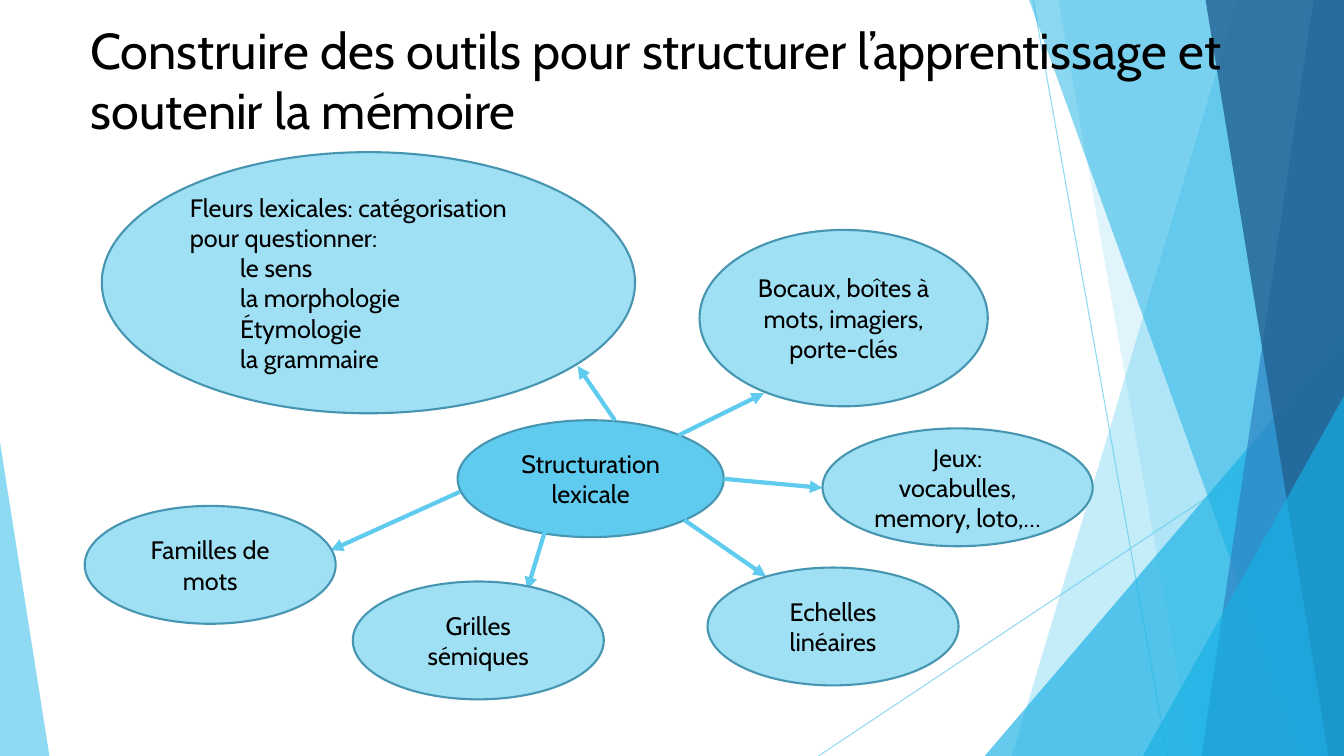
from dataclasses import dataclass

from lxml import etree
from pptx import Presentation
from pptx.dml.color import RGBColor
from pptx.enum.shapes import MSO_CONNECTOR, MSO_SHAPE
from pptx.enum.text import MSO_ANCHOR, PP_ALIGN
from pptx.oxml.ns import qn
from pptx.util import Pt

STRAIGHT = MSO_CONNECTOR.STRAIGHT
OVAL = MSO_SHAPE.OVAL
TRIANGLE = MSO_SHAPE.ISOSCELES_TRIANGLE
TOP, MIDDLE = MSO_ANCHOR.TOP, MSO_ANCHOR.MIDDLE
LEFT, CENTER = PP_ALIGN.LEFT, PP_ALIGN.CENTER
SLIDE_WIDTH, SLIDE_HEIGHT = 960, 540


@dataclass(frozen=True)
class Theme:
    font: str = "Cabin"
    title_size: int = 36
    body_size: int = 18
    text: str = "000000"
    sky: str = "5FCBEF"
    pale: str = "9FE0F5"
    outline: str = "4696B1"
    azure: str = "17B0E4"
    blue: str = "2E83C3"
    navy: str = "226292"


class SlideBuilder:
    def __init__(self, slide, theme):
        self.shapes = slide.shapes
        self.theme = theme

    def set_opacity(self, shape, percent):
        color = shape._element.spPr.find(".//" + qn("a:srgbClr"))
        etree.SubElement(color, qn("a:alpha")).set("val", str(percent * 1000))

    def paint(self, shape, color):
        shape.shadow.inherit = False
        shape.fill.solid()
        shape.fill.fore_color.rgb = RGBColor.from_string(color)

    def paint_facet(self, shape, color, opacity):
        self.paint(shape, color)
        shape.line.fill.background()
        self.set_opacity(shape, opacity)

    def facet(self, points, color, opacity):
        start, *others = [(Pt(x), Pt(y)) for x, y in points]
        builder = self.shapes.build_freeform(*start, scale=1.0)
        builder.add_line_segments(others, close=True)
        self.paint_facet(builder.convert_to_shape(), color, opacity)

    def triangle(self, box, apex, color, opacity):
        shape = self.shapes.add_shape(TRIANGLE, *map(Pt, box))
        shape.adjustments[0] = apex
        self.paint_facet(shape, color, opacity)

    def line(self, start, end, width):
        connector = self.shapes.add_connector(STRAIGHT, *map(Pt, start + end))
        connector.line.width = Pt(width)
        connector.line.color.rgb = RGBColor.from_string(self.theme.sky)
        etree.SubElement(connector._element.spPr, qn("a:effectLst"))
        return connector

    def thin_line(self, start, end):
        self.set_opacity(self.line(start, end, 0.75), 70)

    def arrow(self, start, end):
        connector = self.line(start, end, 3)
        outline = connector._element.spPr.find(qn("a:ln"))
        etree.SubElement(outline, qn("a:tailEnd")).set("type", "triangle")

    def fill_text(self, frame, lines, size, alignment, anchor):
        frame.word_wrap = True
        frame.vertical_anchor = anchor
        for index, (text, indent) in enumerate(lines):
            paragraph = frame.add_paragraph() if index else frame.paragraphs[0]
            paragraph.alignment = alignment
            if indent:
                paragraph._p.get_or_add_pPr().set("marL", str(Pt(indent)))
            run = paragraph.add_run()
            run.text = text
            run.font.name = self.theme.font
            run.font.size = Pt(size)
            run.font.color.rgb = RGBColor.from_string(self.theme.text)

    def title(self, box, text):
        frame = self.shapes.add_textbox(*map(Pt, box)).text_frame
        self.fill_text(frame, [(text, 0)], self.theme.title_size, LEFT, TOP)

    def bubble(self, box, lines, color, alignment=CENTER):
        shape = self.shapes.add_shape(OVAL, *map(Pt, box))
        self.paint(shape, color)
        shape.line.color.rgb = RGBColor.from_string(self.theme.outline)
        shape.line.width = Pt(1.5)
        self.fill_text(shape.text_frame, lines, self.theme.body_size, alignment, MIDDLE)


def draw_background(builder):
    theme = builder.theme
    builder.thin_line((738, 0), (833.8, SLIDE_HEIGHT))
    builder.thin_line((SLIDE_WIDTH, 290.2), (584.6, SLIDE_HEIGHT))

    def band(top_x, bottom_x, color, opacity):
        corners = [(top_x, 0), (SLIDE_WIDTH, 0),
                   (SLIDE_WIDTH, SLIDE_HEIGHT), (bottom_x, SLIDE_HEIGHT)]
        builder.facet(corners, color, opacity)

    def right_triangle(left, top):
        box = (left, top, SLIDE_WIDTH - left, SLIDE_HEIGHT - top)
        builder.triangle(box, 1, theme.azure, 66)

    band(884.2, 722.9, theme.sky, 36)
    band(756, 851.8, theme.sky, 20)
    right_triangle(703.4, 239.8)
    band(735.1, 929.5, theme.azure, 50)
    band(938.2, 858.2, theme.blue, 70)
    band(861.1, 949, theme.navy, 80)
    right_triangle(816.5, 283)
    builder.triangle((0, 316, 35.3, 224), 0, theme.sky, 70)


def draw_map(builder):
    theme = builder.theme
    builder.bubble((326.9, 300.2, 190.1, 83.5), [("Structuration lexicale", 0)], theme.sky)

    arrows = [
        ((439.2, 300.2), (412.6, 261.4)),
        ((484.6, 311), (545.8, 280.8)),
        ((488.9, 371.5), (547.2, 411.8)),
        ((391, 373.7), (376.6, 421.2)),
        ((328.3, 351.4), (236.2, 393.1)),
        ((517, 342), (587.5, 348.5)),
    ]
    for start, end in arrows:
        builder.arrow(start, end)

    tools = [
        ((499.7, 164.2, 205.9, 126), "Bocaux, boîtes à mots, imagiers, porte-clés"),
        ((252, 415.4, 179.3, 84.2), "Grilles sémiques"),
        ((60.5, 361.4, 179.3, 84.2), "Familles de mots"),
        ((587.5, 306, 193, 84.2), "Jeux: vocabulles, memory, loto,…"),
        ((505.4, 405.4, 179.3, 84.2), "Echelles linéaires"),
    ]
    for box, text in tools:
        builder.bubble(box, [(text, 0)], theme.pale)

    flower_lines = [("Fleurs lexicales: catégorisation pour questionner:", 0)]
    for topic in ("le sens", "la morphologie", "Étymologie", "la grammaire"):
        flower_lines.append((topic, 36))
    builder.bubble((72.7, 108.7, 380.9, 186.5), flower_lines, theme.pale, LEFT)


def main():
    presentation = Presentation()
    presentation.slide_width = Pt(SLIDE_WIDTH)
    presentation.slide_height = Pt(SLIDE_HEIGHT)
    slide = presentation.slides.add_slide(presentation.slide_layouts[6])
    builder = SlideBuilder(slide, Theme())
    draw_background(builder)
    builder.title(
        (57.6, 10.1, 879.1, 103.7),
        "Construire des outils pour structurer l’apprentissage et soutenir la mémoire",
    )
    draw_map(builder)
    presentation.save("out.pptx")


if __name__ == "__main__":
    main()
